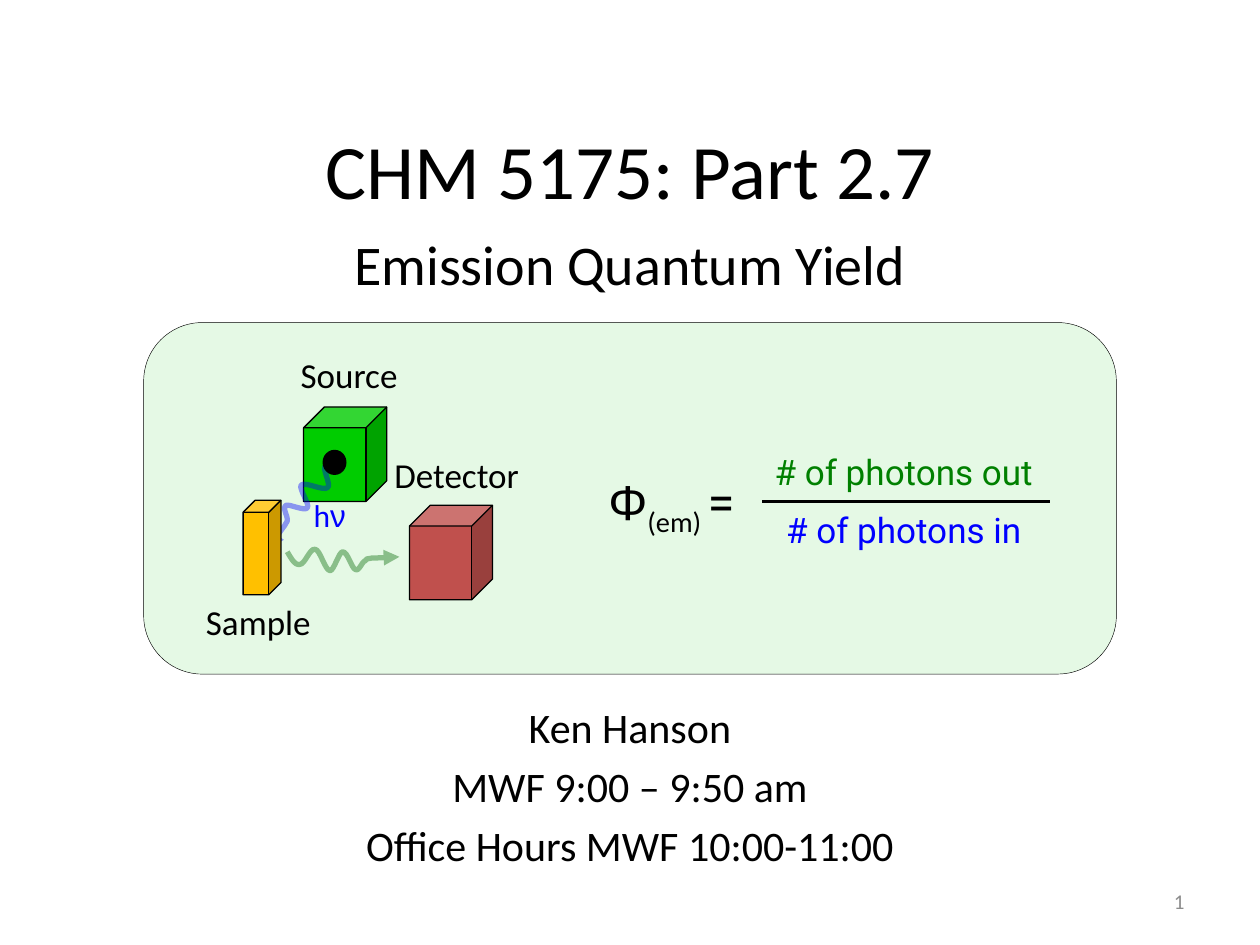
import pptx
import pptx.dml.color
import pptx.enum.shapes
import pptx.enum.text
import pptx.oxml
import pptx.oxml.ns
import pptx.util
from pptx.util import Inches

RGBColor = pptx.dml.color.RGBColor
Shape = pptx.enum.shapes.MSO_SHAPE
Align = pptx.enum.text.PP_ALIGN
Anchor = pptx.enum.text.MSO_ANCHOR

BLACK = RGBColor(0x00, 0x00, 0x00)
GRAY = RGBColor(0x8C, 0x8C, 0x8C)
BLUE = RGBColor(0x00, 0x00, 0xFF)
GREEN = RGBColor(0x00, 0x80, 0x00)
DARK_GREEN = RGBColor(0x00, 0x66, 0x00)
SOURCE_GREEN = RGBColor(0x00, 0xCC, 0x00)
DETECTOR_RED = RGBColor(0xC0, 0x50, 0x4D)
SAMPLE_GOLD = RGBColor(0xFF, 0xC0, 0x00)

INCOMING_START = (2.13, 4.35)
INCOMING_CURVES = [
    ((2.13, 4.35), (2.23, 4.21), (2.26, 4.17)),
    ((2.28, 4.13), (2.28, 4.15), (2.28, 4.12)),
    ((2.28, 4.09), (2.24, 4.03), (2.27, 4.01)),
    ((2.3, 4.0), (2.42, 4.06), (2.44, 4.03)),
    ((2.46, 4.0), (2.37, 3.88), (2.39, 3.85)),
    ((2.42, 3.82), (2.57, 3.9), (2.6, 3.87)),
    ((2.63, 3.85), (2.56, 3.73), (2.58, 3.7)),
    ((2.6, 3.67), (2.66, 3.67), (2.72, 3.68)),
]
EMITTED_START = (3.17, 4.42)
EMITTED_CURVES = [
    ((3.17, 4.42), (2.99, 4.43), (2.95, 4.43)),
    ((2.9, 4.44), (2.92, 4.43), (2.9, 4.45)),
    ((2.87, 4.46), (2.85, 4.54), (2.82, 4.52)),
    ((2.79, 4.51), (2.76, 4.38), (2.72, 4.38)),
    ((2.69, 4.38), (2.65, 4.53), (2.62, 4.53)),
    ((2.58, 4.53), (2.54, 4.36), (2.5, 4.36)),
    ((2.46, 4.35), (2.42, 4.48), (2.38, 4.48)),
    ((2.34, 4.49), (2.31, 4.43), (2.28, 4.38)),
]


def add_child(parent, tag, **attributes):
    """Append a DrawingML element with the given attributes."""
    element = pptx.oxml.parse_xml(f"<a:{tag} {pptx.oxml.ns.nsdecls('a')}/>")
    for name, value in attributes.items():
        element.set(name, value)
    parent.append(element)


def set_opacity(properties, percent):
    """Make the solid colour inside a shape or line element translucent."""
    color = properties.find(".//" + pptx.oxml.ns.qn("a:srgbClr"))
    add_child(color, "alpha", val=str(percent * 1000))


def add_text(slide, box, lines, size, color=BLACK, font="Calibri", align=Align.CENTER,
             anchor=Anchor.TOP, wrap=True, space_before=0):
    """Add a text box with one paragraph per line and return its frame."""
    frame = slide.shapes.add_textbox(*map(Inches, box)).text_frame
    frame.word_wrap = wrap
    frame.vertical_anchor = anchor
    frame.text = "\n".join(lines)
    for paragraph in frame.paragraphs:
        paragraph.alignment = align
        paragraph.space_before = pptx.util.Pt(space_before)
        paragraph.font.size = pptx.util.Pt(size)
        paragraph.font.name = font
        paragraph.font.color.rgb = color
    return frame


def add_run(frame, text, font):
    """Append a run in another font to the first paragraph."""
    run = frame.paragraphs[0].add_run()
    run.text = text
    run.font.name = font
    return run


def add_solid(slide, kind, box, color, line_width=None):
    """Add a filled preset shape, outlined in black if a width is given."""
    shape = slide.shapes.add_shape(kind, *map(Inches, box))
    shape.shadow.inherit = False
    shape.fill.solid()
    shape.fill.fore_color.rgb = color
    if line_width is None:
        shape.line.fill.background()
    else:
        shape.line.color.rgb = BLACK
        shape.line.width = pptx.util.Pt(line_width)
    return shape


def bezier_points(start, curves, steps=8):
    """Return points along a chain of cubic curves."""
    points = []
    for first, second, end in curves:
        for step in range(1, steps + 1):
            t = step / steps
            u = 1 - t
            points.append(tuple(
                Inches(u**3 * a + 3 * u * u * t * b + 3 * u * t * t * c + t**3 * d)
                for a, b, c, d in zip(start, first, second, end)))
        start = end
    return points


def add_wave(slide, start, curves, color):
    """Add a translucent photon wave with an arrowhead at its start."""
    builder = slide.shapes.build_freeform(*map(Inches, start))
    builder.add_line_segments(bezier_points(start, curves), close=False)
    wave = builder.convert_to_shape()
    wave.shadow.inherit = False
    wave.fill.background()
    wave.line.color.rgb = color
    wave.line.width = pptx.util.Pt(3)
    line = wave.line._get_or_add_ln()
    set_opacity(line, 40)
    add_child(line, "round")
    add_child(line, "headEnd", type="triangle")


def add_apparatus(slide):
    """Draw the source, sample and detector with the light between them."""
    add_solid(slide, Shape.CUBE, (2.41, 3.23, 0.66, 0.75), SOURCE_GREEN, 0)
    add_text(slide, (2.21, 2.76, 1.12, 0.44), ["Source"], 20)
    photon = add_text(slide, (2.39, 3.89, 0.5, 0.4), ["h"], 18, BLUE, align=Align.LEFT)
    add_run(photon, "ν", "Arial")
    add_text(slide, (1.39, 4.72, 1.32, 0.44), ["Sample"], 20)
    add_text(slide, (2.86, 3.55, 1.53, 0.44), ["Detector"], 20)
    add_solid(slide, Shape.CUBE, (3.25, 4.01, 0.66, 0.75), DETECTOR_RED, 0)
    add_wave(slide, INCOMING_START, INCOMING_CURVES, BLUE)
    add_wave(slide, EMITTED_START, EMITTED_CURVES, DARK_GREEN)
    add_solid(slide, Shape.OVAL, (2.56, 3.57, 0.19, 0.2), BLACK)
    sample = add_solid(slide, Shape.CUBE, (1.93, 3.97, 0.3, 0.75), SAMPLE_GOLD, 0)
    sample.adjustments[0] = 0.32


def add_equation(slide):
    """Write the quantum yield as a fraction of photon counts."""
    symbol = add_text(slide, (4.73, 3.69, 1.34, 0.57), ["Φ"], 28, font="Arial",
                      align=Align.LEFT, wrap=False)
    subscript = add_run(symbol, "(em) ", "Calibri")
    subscript.font._element.set("baseline", "-25000")
    add_run(symbol, "=", "Roboto")
    bar = slide.shapes.add_connector(
        pptx.enum.shapes.MSO_CONNECTOR.STRAIGHT, *map(Inches, (8.33, 3.98, 6.05, 3.98)))
    bar.line.color.rgb = BLACK
    bar.line.width = pptx.util.Pt(2.25)
    add_child(bar._element.spPr, "effectLst")
    add_text(slide, (6.05, 3.53, 2.3, 0.44), ["# of photons out"], 20, GREEN, "Roboto",
             Align.LEFT, wrap=False)
    add_text(slide, (6.14, 3.99, 2.12, 0.44), ["# of photons in"], 20, BLUE, "Roboto",
             Align.LEFT, wrap=False)


def main():
    """Build the course title slide."""
    presentation = pptx.Presentation()
    presentation.slide_width = Inches(10)
    presentation.slide_height = Inches(7.5)
    slide = presentation.slides.add_slide(presentation.slide_layouts[6])
    add_text(slide, (7.17, 6.95, 2.33, 0.4), ["1"], 12, GRAY,
             align=Align.RIGHT, anchor=Anchor.MIDDLE)
    panel = add_solid(slide, Shape.ROUNDED_RECTANGLE, (1.14, 2.56, 7.72, 2.79),
                      SOURCE_GREEN, 0.25)
    set_opacity(panel._element.spPr, 10)
    add_apparatus(slide)
    add_text(slide, (1.5, 5.52, 7, 1.41),
             ["Ken Hanson", "MWF 9:00 – 9:50 am", "Office Hours MWF 10:00-11:00"],
             24, space_before=4.8)
    add_text(slide, (0.75, 0.53, 8.5, 1.61), ["CHM 5175: Part 2.7"], 44,
             anchor=Anchor.MIDDLE)
    add_text(slide, (1.5, 1.77, 7, 0.71), ["Emission Quantum Yield"], 32, space_before=6.4)
    add_equation(slide)
    presentation.save("out.pptx")


if __name__ == "__main__":
    main()
